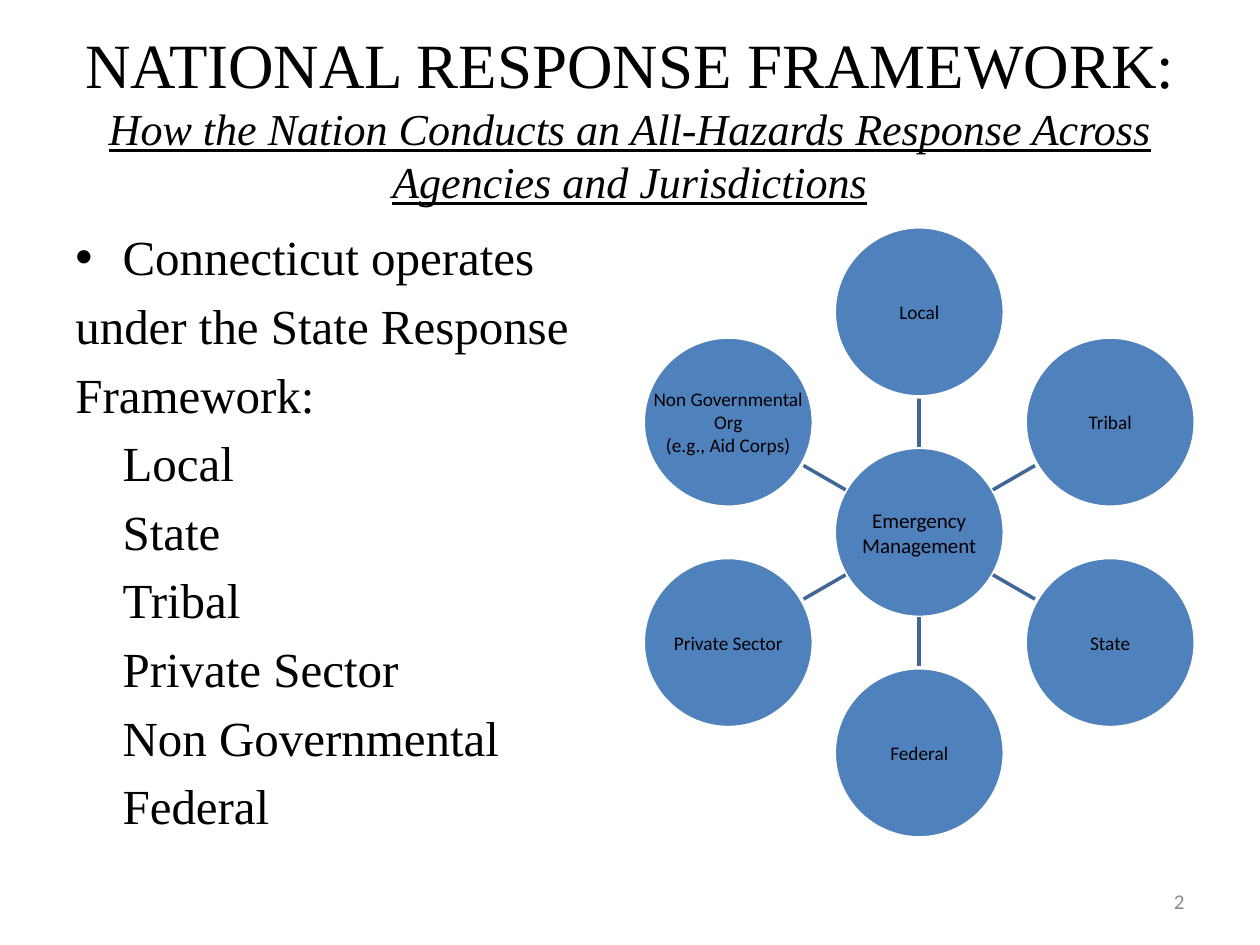
from math import cos, radians, sin

from lxml.etree import SubElement
from pptx import Presentation
from pptx.dml.color import RGBColor
from pptx.enum.shapes import MSO_CONNECTOR, MSO_SHAPE
from pptx.enum.text import MSO_ANCHOR, PP_ALIGN
from pptx.oxml.ns import qn
from pptx.util import Pt

COLORS = {
    "text": "000000",
    "number": "8C8C8C",
    "circle": "4F81BD",
    "outline": "FFFFFF",
    "spoke": "3F6797",
}
SERIF = "Times New Roman"
SANS = "Calibri"

BODY_LINES = ["Connecticut operates", "under the State Response", "Framework:"]
PARTNERS = ["Local", "State", "Tribal", "Private Sector", "Non Governmental", "Federal"]
RING = ["Local", "Tribal", "State", "Federal", "Private Sector",
        "Non Governmental\vOrg\n(e.g., Aid Corps)"]


def color(name):
    return RGBColor.from_string(COLORS[name])


def style(font, name, size, color_name="text"):
    font.name = name
    font.size = Pt(size)
    font.color.rgb = color(color_name)


def add_text_frame(slide, box, anchor=MSO_ANCHOR.TOP):
    frame = slide.shapes.add_textbox(*map(Pt, box)).text_frame
    frame.word_wrap = True
    frame.vertical_anchor = anchor
    return frame


def add_title(slide, box):
    paragraph = add_text_frame(slide, box, MSO_ANCHOR.MIDDLE).paragraphs[0]
    paragraph.alignment = PP_ALIGN.CENTER
    heading = paragraph.add_run()
    heading.text = "NATIONAL RESPONSE FRAMEWORK:"
    style(heading.font, SERIF, 36)
    paragraph.add_line_break()
    subtitle = paragraph.add_run()
    subtitle.text = ("How the Nation Conducts an All-Hazards Response "
                     "Across Agencies and Jurisdictions")
    style(subtitle.font, SERIF, 25.2)
    subtitle.font.italic = True
    subtitle.font.underline = True


def add_body(slide, box):
    frame = add_text_frame(slide, box)
    for index, line in enumerate(BODY_LINES + PARTNERS):
        paragraph = frame.paragraphs[0] if index == 0 else frame.add_paragraph()
        paragraph.text = line
        properties = paragraph._p.get_or_add_pPr()
        if index == 0 or line in PARTNERS:
            properties.set("marL", str(Pt(27)))
        if index == 0:
            properties.set("indent", str(Pt(-27)))
            SubElement(properties, qn("a:buFont")).set("typeface", "Arial")
            SubElement(properties, qn("a:buChar")).set("char", "•")
        else:
            paragraph.space_before = Pt(5.6)
        style(paragraph.font, SERIF, 28)


def add_slide_number(slide, box):
    paragraph = add_text_frame(slide, box, MSO_ANCHOR.MIDDLE).paragraphs[0]
    paragraph.text = "2"
    paragraph.alignment = PP_ALIGN.RIGHT
    style(paragraph.font, SANS, 12, "number")


def add_circle(slide, center_x, center_y, diameter, text, size):
    circle = slide.shapes.add_shape(
        MSO_SHAPE.OVAL, Pt(center_x - diameter / 2), Pt(center_y - diameter / 2),
        Pt(diameter), Pt(diameter))
    circle.shadow.inherit = False
    circle.fill.solid()
    circle.fill.fore_color.rgb = color("circle")
    circle.line.color.rgb = color("outline")
    circle.line.width = Pt(2)
    frame = circle.text_frame
    frame.text = text
    frame.word_wrap = False
    frame.vertical_anchor = MSO_ANCHOR.MIDDLE
    frame.margin_left = frame.margin_right = Pt(0.5)
    frame.margin_top = frame.margin_bottom = Pt(0.5)
    for paragraph in frame.paragraphs:
        paragraph.alignment = PP_ALIGN.CENTER
        style(paragraph.font, SANS, size)


def add_spoke(slide, start, end):
    spoke = slide.shapes.add_connector(
        MSO_CONNECTOR.STRAIGHT, *map(Pt, start), *map(Pt, end))
    spoke.line.color.rgb = color("spoke")
    spoke.line.width = Pt(2)
    SubElement(spoke._element.spPr, qn("a:effectLst"))


def add_wheel(slide, box):
    left, top, width, height = box
    center_x, center_y = left + width / 2, top + height / 2
    diameter = 97.2
    orbit = (height - diameter) / 2

    def point(distance, angle):
        return (center_x + distance * cos(angle), center_y + distance * sin(angle))

    add_circle(slide, center_x, center_y, diameter, "Emergency\vManagement", 12)
    for index, label in enumerate(RING):
        angle = radians(index * 360 / len(RING) - 90)
        add_spoke(slide, point(diameter / 2, angle), point(orbit - diameter / 2, angle))
        add_circle(slide, *point(orbit, angle), diameter, label, 11)


def main():
    presentation = Presentation()
    presentation.slide_width = Pt(720)
    presentation.slide_height = Pt(540)
    slide = presentation.slides.add_slide(presentation.slide_layouts[6])
    add_title(slide, (36, 21.6, 648, 90))
    add_body(slide, (36, 126, 318, 356.4))
    add_slide_number(slide, (516, 500.5, 168, 28.8))
    add_wheel(slide, (367.2, 129.6, 316.2, 349.2))
    presentation.save("out.pptx")


if __name__ == "__main__":
    main()
